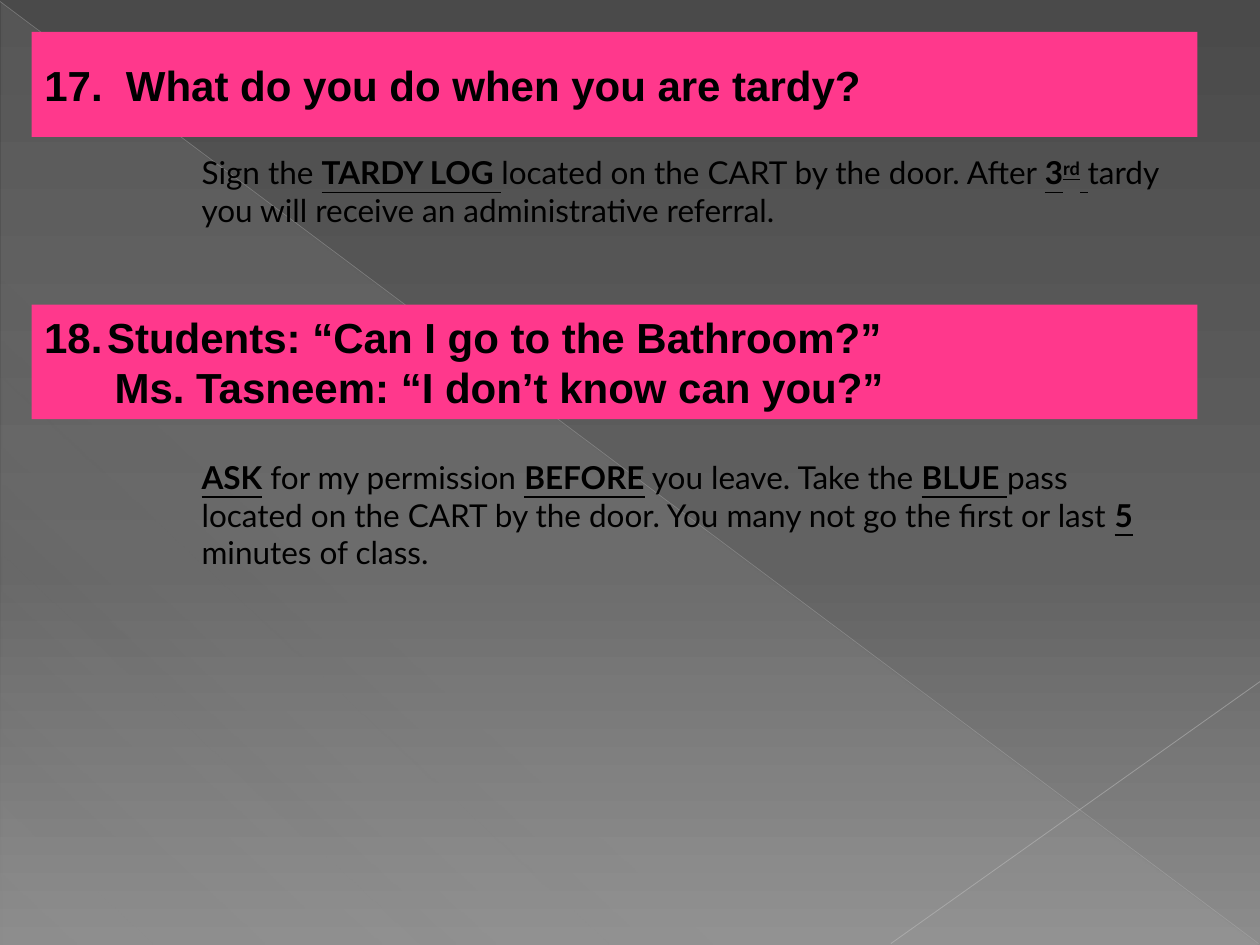
from dataclasses import dataclass

from lxml import etree
from pptx import Presentation
from pptx.dml.color import RGBColor
from pptx.enum import shapes, text
from pptx.oxml import ns
from pptx.util import Cm, Pt


@dataclass(frozen=True)
class Theme:
    banner: str = "FF388C"
    ink: str = "000000"
    sheen: str = "D2D2D2"
    backdrop: tuple = ((0, "4A4A4A", 100), (60, "626262", 100), (100, "8C8C8C", 100))
    heading_font: str = "Arial"
    answer_font: str = "Lato"
    heading_size: int = 24
    answer_size: int = 18


THEME = Theme()
BANNER_LEFT, BANNER_WIDTH = 0.64, 23.5
ANSWER_LEFT, ANSWER_WIDTH = 3.81, 20.1


def add_xml(parent, tag, **attributes):
    values = {name: str(value) for name, value in attributes.items()}
    return etree.SubElement(parent, ns.qn(tag), values)


def paint_gradient(fill, owner, stops, angle):
    """Fill with (position, colour, opacity) stops, all in percent; angle is clockwise."""
    fill.gradient()
    fill.gradient_angle = 360 - angle
    stop_list = next(owner.iter(ns.qn("a:gsLst")))
    for default_stop in list(stop_list):
        stop_list.remove(default_stop)
    for position, color, opacity in stops:
        stop = add_xml(stop_list, "a:gs", pos=position * 1000)
        add_xml(add_xml(stop, "a:srgbClr", val=color), "a:alpha", val=opacity * 1000)


def add_sheen(slide):
    triangle = slide.shapes.add_shape(
        shapes.MSO_SHAPE.RIGHT_TRIANGLE, Cm(0.03), Cm(0.05), Cm(25.35), Cm(19))
    triangle.shadow.inherit = False
    triangle.line.fill.background()
    stops = [(0, THEME.sheen, 10), (70, THEME.sheen, 8), (100, THEME.sheen, 1)]
    paint_gradient(triangle.fill, triangle._element, stops, 133)
    return triangle


def add_hairline(slide, start, end, color, width, opacity):
    hairline = slide.shapes.add_connector(
        shapes.MSO_CONNECTOR.STRAIGHT, *map(Cm, start + end))
    hairline.line.color.rgb = RGBColor.from_string(color)
    hairline.line.width = Pt(width)
    tint = next(hairline._element.spPr.iter(ns.qn("a:srgbClr")))
    add_xml(tint, "a:alpha", val=opacity * 1000)
    add_xml(hairline._element.spPr, "a:effectLst")
    return hairline


def place(shape, left, top, width, height):
    shape.left, shape.top, shape.width, shape.height = map(Cm, (left, top, width, height))


def set_paragraph(paragraph, font, size, bold):
    paragraph.alignment = text.PP_ALIGN.LEFT
    paragraph.space_before = Pt(0)
    paragraph.font.name = font
    paragraph.font.size = Pt(size)
    paragraph.font.bold = bold
    paragraph.font.color.rgb = RGBColor.from_string(THEME.ink)


def set_indent(paragraph, left, first=0, number=None):
    """Indent a paragraph, with an automatic number or with no bullet."""
    properties = paragraph._p.get_or_add_pPr()
    properties.set("marL", str(Cm(left)))
    properties.set("indent", str(Cm(first)))
    if number:
        bullet = etree.Element(
            ns.qn("a:buAutoNum"), {"type": "arabicPeriod", "startAt": str(number)})
    else:
        bullet = etree.Element(ns.qn("a:buNone"))
    defaults = properties.find(ns.qn("a:defRPr"))
    defaults.addprevious(bullet)


def fill_banner(banner, top, height, lines):
    """Style a question banner; each line is (text, indent, first indent, number)."""
    place(banner, BANNER_LEFT, top, BANNER_WIDTH, height)
    banner.fill.solid()
    banner.fill.fore_color.rgb = RGBColor.from_string(THEME.banner)
    banner.line.fill.background()
    frame = banner.text_frame
    frame.word_wrap = True
    frame.vertical_anchor = text.MSO_ANCHOR.MIDDLE
    frame.auto_size = text.MSO_AUTO_SIZE.SHAPE_TO_FIT_TEXT
    for index, (wording, *indent) in enumerate(lines):
        paragraph = frame.add_paragraph() if index else frame.paragraphs[0]
        paragraph.text = wording
        set_paragraph(paragraph, THEME.heading_font, THEME.heading_size, True)
        set_indent(paragraph, *indent)


def fill_answer(answer, top, height, marked_text):
    """Write an answer: *key words* are bold and underlined, ^parts^ of them raised."""
    place(answer, ANSWER_LEFT, top, ANSWER_WIDTH, height)
    frame = answer.text_frame
    frame.word_wrap = True
    frame.auto_size = text.MSO_AUTO_SIZE.SHAPE_TO_FIT_TEXT
    paragraph = frame.paragraphs[0]
    set_paragraph(paragraph, THEME.answer_font, THEME.answer_size, False)
    set_indent(paragraph, 0)
    for index, phrase in enumerate(marked_text.split("*")):
        for part_index, part in enumerate(phrase.split("^")):
            if not part:
                continue
            run = paragraph.add_run()
            run.text = part
            if index % 2:
                run.font.bold = run.font.underline = True
            if part_index % 2:
                run._r.get_or_add_rPr().set("baseline", "30000")


def main():
    deck = Presentation()
    deck.slide_width, deck.slide_height = Cm(25.4), Cm(19.05)
    slide = deck.slides.add_slide(deck.slide_layouts.get_by_name("Two Content"))
    paint_gradient(slide.background.fill, slide._element, THEME.backdrop, 90)

    decorations = [
        add_sheen(slide),
        add_hairline(slide, (0, 0.03), (25.37, 19.02), "BFBFBF", 0.39, 35),
        add_hairline(slide, (25.4, 13.74), (17.96, 19.02), "C6C6C6", 0.47, 45),
    ]
    first_placeholder = slide.shapes.title._element
    for decoration in decorations:
        first_placeholder.addprevious(decoration._element)

    tardy_question = slide.shapes.title
    _, tardy_answer, bathroom_answer = slide.placeholders
    fill_banner(tardy_question, 1.06, 1.28,
                [("17.  What do you do when you are tardy?", 0)])
    fill_answer(tardy_answer, 2.96, 1.8,
                "Sign the *TARDY LOG *located on the CART by the door. After "
                "*3^rd^ *tardy you will receive an administrative referral.")

    bathroom_question = slide.shapes.add_shape(
        shapes.MSO_SHAPE.RECTANGLE, 0, 0, Cm(1), Cm(1))
    bathroom_question.shadow.inherit = False
    fill_banner(bathroom_question, 6.14, 2.31, [
        ("Students: “Can I go to the Bathroom?”", 1.27, -1.27, 18),
        ("Ms. Tasneem: “I don’t know can you?”", 1.42),
    ])
    fill_answer(bathroom_answer, 9.1, 2.57,
                "*ASK* for my permission *BEFORE* you leave. Take the *BLUE *pass "
                "located on the CART by the door. You many not go the first or last "
                "*5 *minutes of class.")
    deck.save("out.pptx")


if __name__ == "__main__":
    main()
